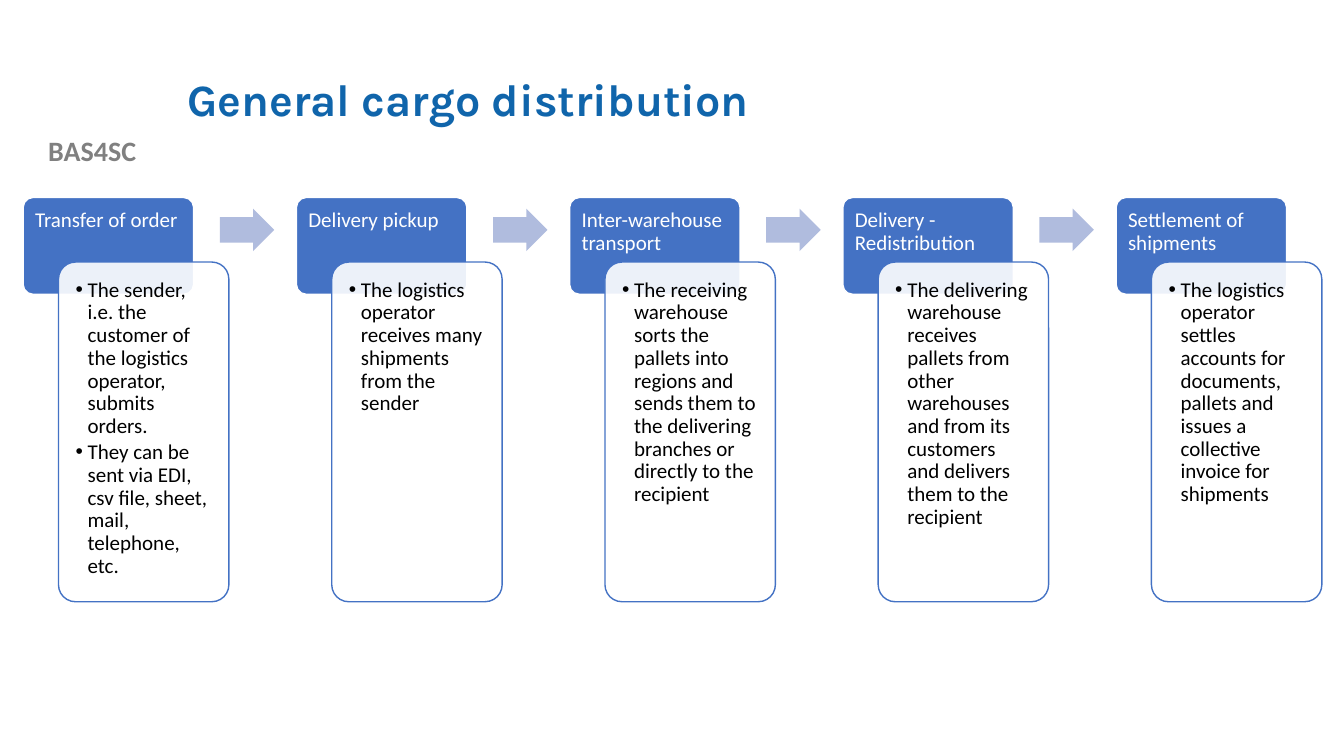
from lxml.etree import SubElement
from pptx import Presentation
from pptx.dml.color import RGBColor
from pptx.enum.shapes import MSO_SHAPE
from pptx.enum.text import MSO_ANCHOR, PP_ALIGN
from pptx.oxml.ns import qn
from pptx.util import Pt

EMU_PER_PX = 9144
WHITE = RGBColor(0xFF, 0xFF, 0xFF)
BLACK = RGBColor(0x00, 0x00, 0x00)
GRAY = RGBColor(0x80, 0x80, 0x80)
TITLE_BLUE = RGBColor(0x10, 0x65, 0xAB)
STEP_BLUE = RGBColor(0x44, 0x72, 0xC4)
ARROW_BLUE = RGBColor(0xB0, 0xBC, 0xDE)

STEP_LEFT = 23
STEP_PITCH = 271
DETAIL_OFFSET = 35
ARROW_OFFSET = 195

STEPS = [
    ("Transfer of order", [
        "The sender, i.e. the customer of the logistics operator, submits orders.",
        "They can be sent via EDI, csv file, sheet, mail, telephone, etc."]),
    ("Delivery pickup", [
        "The logistics operator receives many shipments from the sender"]),
    ("Inter-warehouse transport", [
        "The receiving warehouse sorts the pallets into regions and sends them to "
        "the delivering branches or directly to the recipient"]),
    ("Delivery - Redistribution", [
        "The delivering warehouse receives pallets from other warehouses and from "
        "its customers and delivers them to the recipient"]),
    ("Settlement of shipments", [
        "The logistics operator settles accounts for documents, pallets and issues "
        "a collective invoice for shipments"]),
]


def px(value):
    return value * EMU_PER_PX


def set_attributes(target, values):
    for name, value in values.items():
        setattr(target, name, value)


def set_insets(text_frame, inset):
    for side in ("left", "top", "right", "bottom"):
        setattr(text_frame, f"margin_{side}", px(inset))


def add_bullet(paragraph, indent):
    properties = paragraph._p.get_or_add_pPr()
    properties.set("marL", str(px(indent)))
    properties.set("indent", str(-px(indent)))
    SubElement(properties, qn("a:buFont")).set("typeface", "Arial")
    SubElement(properties, qn("a:buChar")).set("char", "•")


def fill_text(text_frame, texts, font, layout, bullet_indent=0):
    set_attributes(text_frame, {"word_wrap": True})
    for index, text in enumerate(texts):
        paragraph = text_frame.paragraphs[0] if index == 0 else text_frame.add_paragraph()
        if bullet_indent:
            add_bullet(paragraph, bullet_indent)
        set_attributes(paragraph, layout)
        run = paragraph.add_run()
        run.text = text
        color = font["color"]
        set_attributes(run.font, {key: font[key] for key in font if key != "color"})
        run.font.color.rgb = color


def add_label(slide, box, text, font, layout, anchor):
    shape = slide.shapes.add_textbox(*map(px, box))
    shape.text_frame.vertical_anchor = anchor
    fill_text(shape.text_frame, [text], font, layout)


def add_block(slide, kind, box, adjustments, fill, line=None):
    shape = slide.shapes.add_shape(kind, *map(px, box))
    shape.shadow.inherit = False
    for index, value in enumerate(adjustments):
        shape.adjustments[index] = value
    shape.fill.solid()
    shape.fill.fore_color.rgb = fill
    if line is None:
        shape.line.fill.background()
    else:
        shape.line.color.rgb = line
        shape.line.width = Pt(1)
    return shape


def set_opacity(shape, percent):
    color = shape._element.spPr.find(qn("a:solidFill")).find(qn("a:srgbClr"))
    SubElement(color, qn("a:alpha")).set("val", str(percent * 1000))


def add_card(slide, box, fill, line, inset, texts, color, bullet_indent=0):
    shape = add_block(slide, MSO_SHAPE.ROUNDED_RECTANGLE, box, [0.1], fill, line)
    shape.text_frame.vertical_anchor = MSO_ANCHOR.TOP
    set_insets(shape.text_frame, inset)
    fill_text(
        shape.text_frame, texts,
        {"name": "Calibri", "size": Pt(15), "color": color},
        {"alignment": PP_ALIGN.LEFT, "line_spacing": 0.9, "space_after": Pt(2.5)},
        bullet_indent)
    return shape


def add_step(slide, left, heading, details):
    add_card(slide, (left, 196, 169, 96), STEP_BLUE, WHITE, 9, [heading], WHITE)
    detail_card = add_card(slide, (left + DETAIL_OFFSET, 260, 169, 337), WHITE,
                           STEP_BLUE, 12, details, BLACK, bullet_indent=12)
    set_opacity(detail_card, 90)


def main():
    presentation = Presentation()
    set_attributes(presentation, {"slide_width": px(1333), "slide_height": px(750)})
    slide = presentation.slides.add_slide(presentation.slide_layouts[6])

    add_label(slide, (0, 128, 183, 44), "BAS4SC",
              {"name": "Calibri", "size": Pt(20), "bold": True, "color": GRAY},
              {"alignment": PP_ALIGN.CENTER}, MSO_ANCHOR.TOP)
    add_label(slide, (176, 40, 1066, 122), "General cargo distribution",
              {"name": "Karla", "size": Pt(32), "bold": True, "color": TITLE_BLUE},
              {"alignment": PP_ALIGN.LEFT, "line_spacing": 0.9}, MSO_ANCHOR.MIDDLE)

    for index, (heading, details) in enumerate(STEPS):
        left = STEP_LEFT + index * STEP_PITCH
        add_step(slide, left, heading, details)
        if index < len(STEPS) - 1:
            add_block(slide, MSO_SHAPE.RIGHT_ARROW, (left + ARROW_OFFSET, 207, 54, 42),
                      [0.6, 0.5], ARROW_BLUE)

    presentation.save("out.pptx")


if __name__ == "__main__":
    main()
